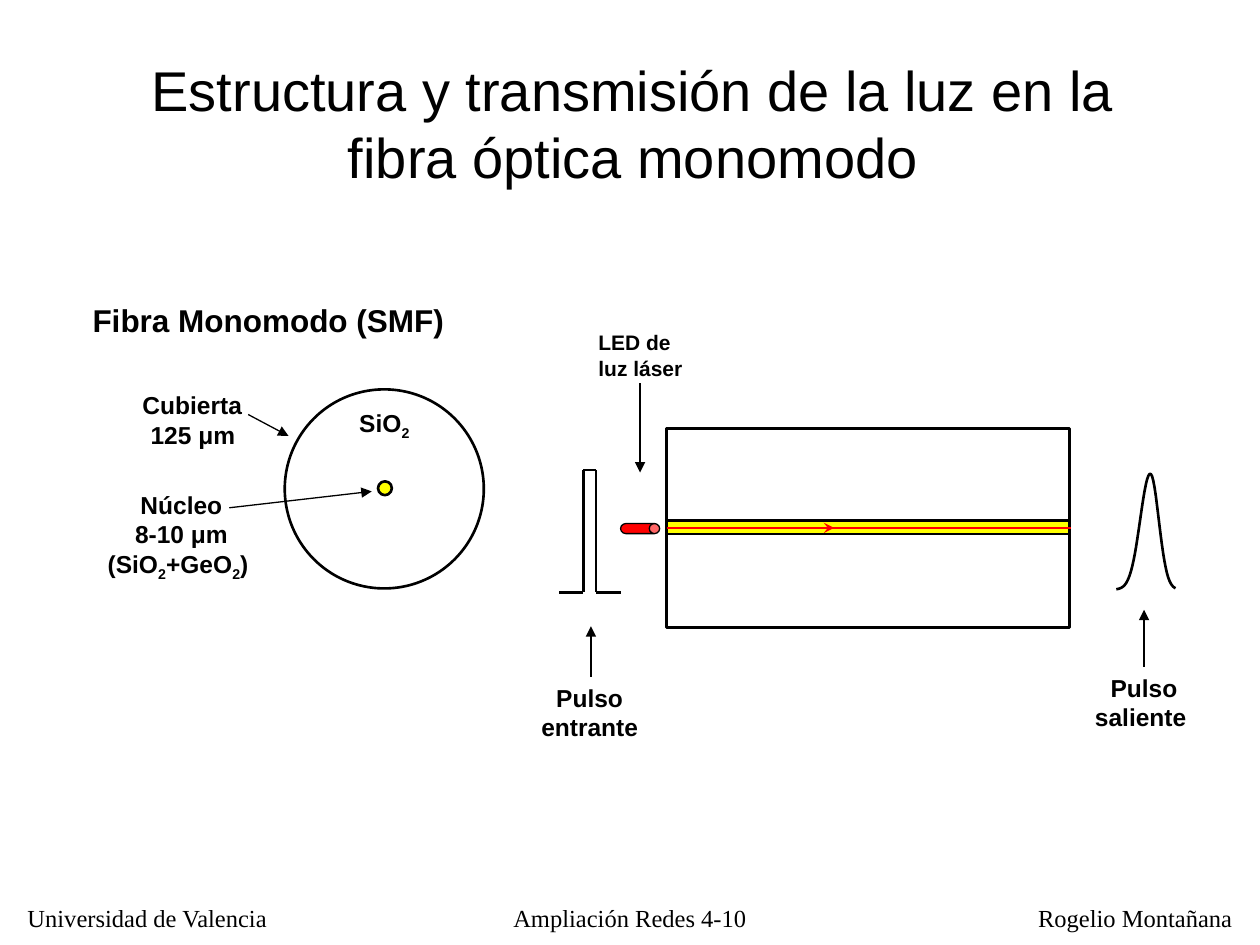
import math
from dataclasses import dataclass

import pptx
import pptx.dml.color
import pptx.enum.shapes
import pptx.enum.text
import pptx.oxml
import pptx.oxml.ns
import pptx.util

Align = pptx.enum.text.PP_ALIGN
Preset = pptx.enum.shapes.MSO_SHAPE
Point = tuple[float, float]

# The slide is a grid of 100 columns by 75 rows of square cells.
COLUMNS, ROWS = 100, 75
CELL = pptx.util.Inches(0.1)


@dataclass(frozen=True)
class Theme:
    ink: str = "000000"
    core: str = "FFFF00"
    light: str = "FF0000"
    sans: str = "Arial"
    serif: str = "Times New Roman"
    title: int = 32
    heading: int = 18
    label: int = 14
    small: int = 12
    outline: float = 1.5
    thin: float = 0.75


THEME = Theme()


@dataclass(frozen=True)
class Label:
    """Text in a box; a part between ~ marks is a subscript."""
    text: str
    column: float
    row: float
    width: float
    height: float
    size: int = THEME.label
    font: str = THEME.sans
    bold: bool = True
    align: Align = Align.CENTER
    wrap: bool = False
    indent: float = 1
    anchor: pptx.enum.text.MSO_ANCHOR = pptx.enum.text.MSO_ANCHOR.TOP


@dataclass(frozen=True)
class Body:
    preset: Preset
    column: float
    row: float
    width: float
    height: float
    fill: str | None = None
    weight: float = THEME.outline


@dataclass(frozen=True)
class Stroke:
    start: Point
    end: Point
    color: str = THEME.ink
    weight: float = THEME.outline
    head: str | None = None


def pointer(start: Point, end: Point) -> Stroke:
    return Stroke(start, end, weight=THEME.thin, head="triangle")


FOOTER = dict(font=THEME.serif, bold=False)
LABELS = [
    Label("Universidad de Valencia", 1.2, 71.2, 21.3, 3.3, align=Align.LEFT, **FOOTER),
    Label("Ampliación Redes 4-10", 39, 71.2, 22, 3.1, wrap=True, **FOOTER),
    Label("Rogelio Montañana", 81.4, 71.2, 17.4, 3.3, align=Align.LEFT, **FOOTER),
    Label("Estructura y transmisión de la luz en la fibra óptica monomodo",
          10.7, 3.8, 79.1, 11.8, size=THEME.title, bold=False, wrap=True,
          anchor=pptx.enum.text.MSO_ANCHOR.MIDDLE),
    Label("Fibra Monomodo (SMF)", 6.2, 23.4, 30.2, 4, size=THEME.heading),
    Label("Cubierta\n125 μm ", 10.3, 30.5, 9.9, 5.7, align=Align.RIGHT),
    Label("Núcleo\n8-10 μm\n(SiO~2~+GeO~2~) ", 7.5, 38.4, 13.8, 8),
    Label("SiO~2 ~", 27.2, 31.9, 6.6, 3.3, align=Align.RIGHT),
    Label("LED de\nluz láser", 45.3, 25.7, 11, 5, size=THEME.small,
          align=Align.LEFT, wrap=True, indent=2.2),
    Label("Pulso\nentrante ", 41.7, 53.7, 10.2, 5.7),
    Label("Pulso\nsaliente ", 85.9, 52.9, 9.8, 5.7),
]

BODIES = [
    Body(Preset.OVAL, 30, 38.2, 1.1, 1.1, THEME.core),
    Body(Preset.OVAL, 22.6, 30.9, 15.8, 15.8),
    Body(Preset.RECTANGLE, 52.9, 34, 32, 15.8),
    Body(Preset.RECTANGLE, 52.9, 41.3, 32, 1.1, THEME.core),
]
LASER = Body(Preset.CAN, 50.4, 40.4, 0.8, 3.1, THEME.light, THEME.thin)

SQUARE_PULSE = [(44.4, 47), (46.3, 47), (46.3, 37.3), (47.3, 37.3), (47.3, 47), (49.3, 47)]
STROKES = [Stroke(start, end) for start, end in zip(SQUARE_PULSE, SQUARE_PULSE[1:])] + [
    Stroke((52.9, 41.9), (85, 41.9), THEME.light),
    Stroke((64.5, 41.9), (66.2, 41.9), THEME.light, head="stealth"),
    pointer((19.7, 32.9), (22.9, 34.6)),
    pointer((18.2, 40.3), (29.5, 39)),
    pointer((46.9, 53.7), (46.9, 49.7)),
    pointer((90.8, 52.9), (90.8, 48.4)),
    pointer((50.8, 30.4), (50.8, 37.5)),
]


def cells(*counts: float) -> list[int]:
    return [round(count * CELL) for count in counts]


def rgb(color: str) -> pptx.dml.color.RGBColor:
    return pptx.dml.color.RGBColor.from_string(color)


def set_line(line, color: str, weight: float) -> None:
    line.color.rgb = rgb(color)
    line.width = pptx.util.Pt(weight)


def draw_label(slide, label: Label) -> None:
    box = slide.shapes.add_textbox(*cells(label.column, label.row, label.width, label.height))
    frame = box.text_frame
    frame.word_wrap = label.wrap
    frame.vertical_anchor = label.anchor
    frame.margin_left = cells(label.indent)[0]
    frame.text = label.text.replace("~", "")
    for para, line in zip(frame.paragraphs, label.text.split("\n")):
        para.alignment = label.align
        para.font.size = pptx.util.Pt(label.size)
        para.clear()
        for index, part in enumerate(line.split("~")):
            if not part:
                continue
            span = para.add_run()
            span.text = part
            span.font.name = label.font
            span.font.size = pptx.util.Pt(label.size)
            span.font.bold = label.bold
            span.font.color.rgb = rgb(THEME.ink)
            if index % 2:
                span._r.get_or_add_rPr().set("baseline", "-25000")


def draw_body(slide, body: Body):
    shape = slide.shapes.add_shape(
        body.preset, *cells(body.column, body.row, body.width, body.height))
    shape.shadow.inherit = False
    if body.fill:
        shape.fill.solid()
        shape.fill.fore_color.rgb = rgb(body.fill)
    else:
        shape.fill.background()
    set_line(shape.line, THEME.ink, body.weight)
    return shape


def draw_stroke(slide, stroke: Stroke) -> None:
    line = slide.shapes.add_connector(
        pptx.enum.shapes.MSO_CONNECTOR.STRAIGHT, *cells(*stroke.start, *stroke.end))
    set_line(line.line, stroke.color, stroke.weight)
    if stroke.head:
        tail = pptx.oxml.parse_xml(
            f'<a:tailEnd {pptx.oxml.ns.nsdecls("a")} type="{stroke.head}"/>')
        line.line._get_or_add_ln().append(tail)
    line._element.spPr.append(
        pptx.oxml.parse_xml(f'<a:effectLst {pptx.oxml.ns.nsdecls("a")}/>'))


def draw_spread_pulse(slide) -> None:
    """Draw the outgoing pulse as a bell curve, steeper on its right side."""
    first, peak, last, base, height = 88.6, 91.3, 93.3, 46.8, 9.2
    steps = 48
    points = []
    for step in range(steps + 1):
        column = first + (last - first) * step / steps
        spread = 0.8 if column < peak else 0.67
        row = base - height * math.exp(-((column - peak) / spread) ** 2 / 2)
        points.append(tuple(cells(column, row)))
    builder = slide.shapes.build_freeform(*points[0])
    builder.add_line_segments(points[1:], close=False)
    curve = builder.convert_to_shape()
    curve.shadow.inherit = False
    curve.fill.background()
    set_line(curve.line, THEME.ink, THEME.outline)


def main() -> None:
    deck = pptx.Presentation()
    deck.slide_width, deck.slide_height = cells(COLUMNS, ROWS)
    slide = deck.slides.add_slide(deck.slide_layouts[6])
    for body in BODIES:
        draw_body(slide, body)
    for stroke in STROKES:
        draw_stroke(slide, stroke)
    laser = draw_body(slide, LASER)
    laser.rotation = 90
    laser.adjustments[0] = 1.03
    draw_spread_pulse(slide)
    for label in LABELS:
        draw_label(slide, label)
    deck.save("out.pptx")


if __name__ == "__main__":
    main()
